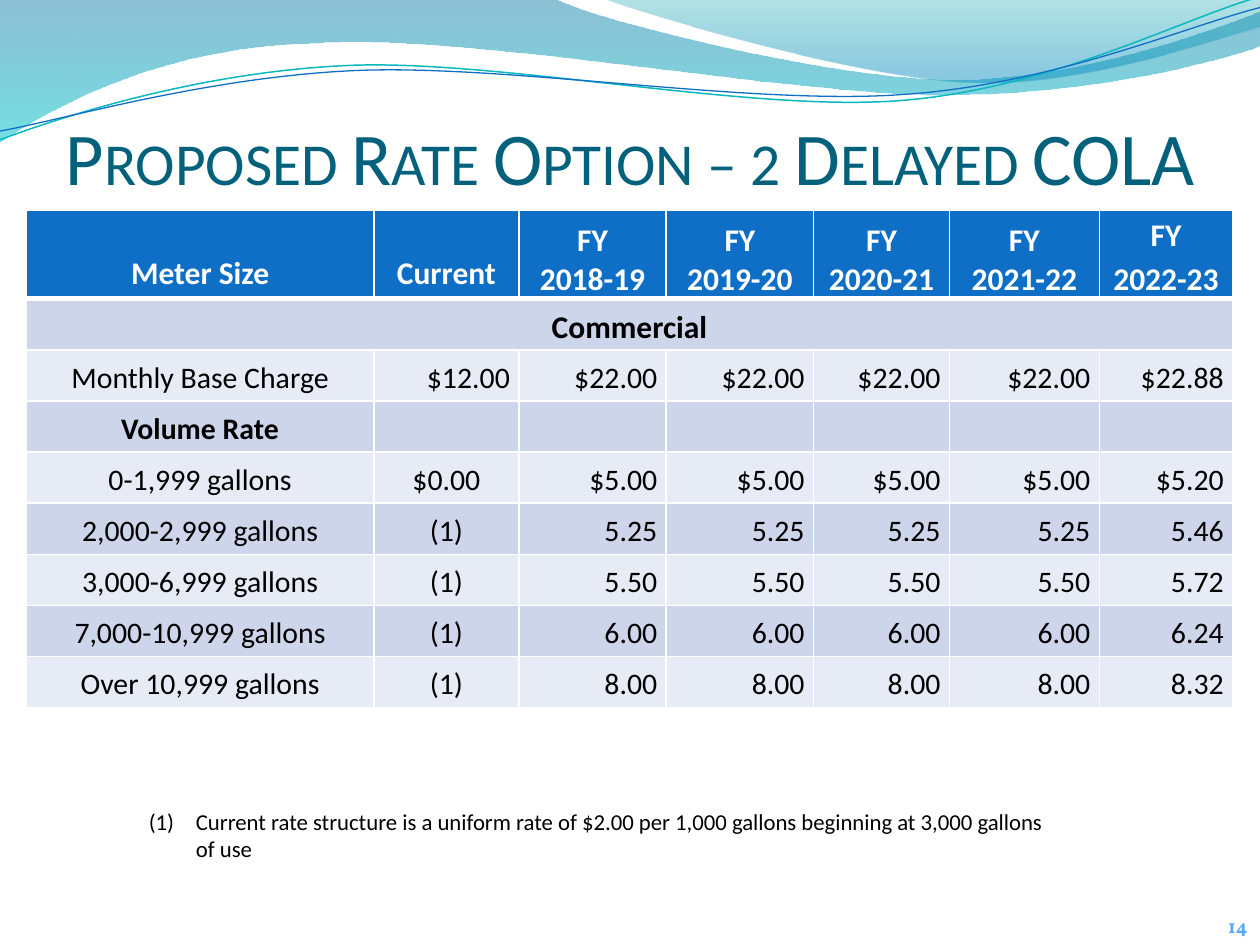
from lxml import etree
from pptx import Presentation
from pptx import util as u
from pptx.dml import color
from pptx.enum import text
from pptx.oxml import ns

COLORS = {
    "title": "04617B", "header": "0F6FC6", "band": "CCD5EA", "plain": "E7EBF5",
    "white": "FFFFFF", "black": "000000", "number": "59AAF2",
    "teal": "0AB8BF", "blue": "0F6FC6",
    "deep": "0074A1", "aqua": "00C6CF", "sea": "00A1A9", "sky": "008BBF",
}
FONT = "Calibri"
ALIGN = text.PP_ALIGN
ANCHOR = text.MSO_ANCHOR

BACK_WAVE = [(0, 0), (4.4, -0.01), (4.76, 0.17, 6.64, 0.63, 7.58, 0.63),
             (8.53, 0.63, 9.58, 0.26, 10, 0.09), (10.01, 0.36),
             (9.83, 0.44, 8.7, 0.76, 7.46, 0.75), (6.22, 0.75, 3.82, 0.28, 2.57, 0.34),
             (1.29, 0.36, 0.46, 0.83, -0.01, 1.13)]
FRONT_WAVE = [(4.79, -0.01), (5.09, 0.11, 6.82, 0.62, 7.69, 0.65),
              (8.56, 0.69, 9.61, 0.32, 10, 0.21), (10, 0)]
TEAL_LINE = [(0, 1.11), (0.48, 0.93, 1.58, 0.57, 2.77, 0.52),
             (3.95, 0.47, 5.93, 0.89, 7.13, 0.8), (8.33, 0.71, 9.38, 0.15, 9.98, -0.02)]
BLUE_LINE = [(0, 1.04), (0.47, 0.96, 1.64, 0.61, 2.83, 0.56),
             (4.03, 0.51, 5.97, 0.84, 7.17, 0.75), (8.36, 0.67, 9.41, 0.21, 10, 0.06)]

HEADERS = ["Meter Size", "Current"] + [f"FY\v20{y}-{y + 1}" for y in range(18, 23)]
COL_WIDTHS = [7.01, 2.92, 2.97, 2.97, 2.74, 3.02, 2.69]
HEADER_HEIGHT, ROW_HEIGHT = 1.7, 1.03
RATES = [
    ("Monthly Base Charge", "$12.00", "$22.00", "$22.88"),
    ("Volume Rate", "", "", ""),
    ("0-1,999 gallons", "$0.00", "$5.00", "$5.20"),
    ("2,000-2,999 gallons", "(1)", "5.25", "5.46"),
    ("3,000-6,999 gallons", "(1)", "5.50", "5.72"),
    ("7,000-10,999 gallons", "(1)", "6.00", "6.24"),
    ("Over 10,999 gallons", "(1)", "8.00", "8.32"),
]


def rgb(name):
    return color.RGBColor.from_string(COLORS[name])


def set_font(p, size, name, bold=False, font=FONT):
    p.font.size = u.Pt(size)
    p.font.name = font
    p.font.bold = bold
    p.font.color.rgb = rgb(name)


def add_curve(slide, box, outline, close):
    left, top, width = box
    points = [(u.Cm(left + x * width / 10), u.Cm(top + y * width / 10))
              for segment in outline for x, y in zip(segment[::2], segment[1::2])]
    builder = slide.shapes.build_freeform(*points[0])
    builder.add_line_segments(points[1:], close=close)
    sp = builder.convert_to_shape()
    sp.shadow.inherit = False
    lines = iter(list(sp._element.iter(ns.qn("a:lnTo"))))
    for segment in outline[1:]:
        first = next(lines)
        if len(segment) == 6:
            first.tag_name = None
            curve = etree.Element(ns.qn("a:cubicBezTo"))
            first.addprevious(curve)
            for line in (first, next(lines), next(lines)):
                curve.append(line[0])
                line.getparent().remove(line)
    return sp


def add_waves(slide, box):
    waves = [(BACK_WAVE, [(0, "deep", 45), (1, "aqua", 55)]),
             (FRONT_WAVE, [(0, "sea", 30), (0.8, "sky", 45)])]
    for outline, stops in waves:
        sp = add_curve(slide, box, outline, True)
        sp.line.fill.background()
        sp.fill.gradient()
        sp.fill.gradient_angle = 270
        for stop, (position, name, opacity) in zip(sp.fill.gradient_stops, stops):
            stop.position = position
            stop.color.rgb = rgb(name)
        for tag, (_, _, opacity) in zip(sp._element.spPr.iter(ns.qn("a:srgbClr")), stops):
            etree.SubElement(tag, ns.qn("a:alpha"), val=str(opacity * 1000))
    for outline, name, width in [(TEAL_LINE, "teal", 0.85), (BLUE_LINE, "blue", 0.75)]:
        sp = add_curve(slide, box, outline, False)
        sp.fill.background()
        sp.line.color.rgb = rgb(name)
        sp.line.width = u.Pt(width)


def add_title(slide, box, words):
    title = slide.shapes.title
    title.left, title.top, title.width, title.height = map(u.Cm, box)
    tf = title.text_frame
    tf.auto_size = text.MSO_AUTO_SIZE.NONE
    tf.word_wrap = True
    tf.vertical_anchor = ANCHOR.MIDDLE
    tf.margin_left = tf.margin_right = tf.margin_bottom = 0
    p = tf.paragraphs[0]
    r = p.add_run()
    r.text = words
    r._r.get_or_add_rPr().set("cap", "small")
    p.alignment = ALIGN.CENTER
    set_font(p, 42.5, "title")


def add_borders(cell, bottom):
    tc_pr = cell._tc.get_or_add_tcPr()
    for side, width in [("L", 1), ("R", 1), ("T", 1), ("B", bottom)]:
        ln = etree.SubElement(tc_pr, ns.qn(f"a:ln{side}"), w=str(u.Pt(width)))
        fill = etree.SubElement(ln, ns.qn("a:solidFill"))
        etree.SubElement(fill, ns.qn("a:srgbClr"), val=COLORS["white"])


def format_cell(cell, row, col, words):
    header, section = row == 0, row in (1, 3)
    add_borders(cell, 3 if header else 1)
    cell.fill.solid()
    cell.fill.fore_color.rgb = rgb("header" if header else "band" if row % 2 else "plain")
    cell.vertical_anchor = ANCHOR.BOTTOM if header else ANCHOR.MIDDLE
    if not header or col > 1:
        cell.margin_left = cell.margin_right = u.Cm(0.18)
        cell.margin_top = cell.margin_bottom = 0
    cell.text = words
    p = cell.text_frame.paragraphs[0]
    centered = header or col == 0 or (col == 1 and row > 2)
    p.alignment = ALIGN.CENTER if centered else ALIGN.RIGHT
    if not header or col == len(HEADERS) - 1:
        p.line_spacing = 1.15
    set_font(p, 18 if row < 2 else 17, "white" if header else "black", header or section)


def add_rates(slide, box):
    rows = [HEADERS, ["Commercial"] + [""] * 6]
    rows += [[label, current] + [steady] * 4 + [last] for label, current, steady, last in RATES]
    left, top, width, height = map(u.Cm, box)
    table = slide.shapes.add_table(len(rows), len(HEADERS), left, top, width, height).table
    table.first_row = table.horz_banding = False
    for column, size in zip(table.columns, COL_WIDTHS):
        column.width = u.Cm(size)
    for i, values in enumerate(rows):
        table.rows[i].height = u.Cm(ROW_HEIGHT if i else HEADER_HEIGHT)
        for j, words in enumerate(values):
            format_cell(table.cell(i, j), i, j, words)
    table.cell(1, 0).merge(table.cell(1, len(HEADERS) - 1))


def add_text(slide, box, words):
    tf = slide.shapes.add_textbox(*map(u.Cm, box)).text_frame
    tf.word_wrap = True
    p = tf.paragraphs[0]
    p.text = words
    return p


def add_footnote(slide, box, words):
    p = add_text(slide, box, words)
    p_pr = p._p.get_or_add_pPr()
    p_pr.set("marL", str(u.Cm(0.95)))
    p_pr.set("indent", str(u.Cm(-0.95)))
    etree.SubElement(p_pr, ns.qn("a:buFont"), typeface="+mj-lt")
    etree.SubElement(p_pr, ns.qn("a:buAutoNum"), type="arabicParenBoth")
    set_font(p, 13, "black")


def add_page_number(slide, box, number):
    p = add_text(slide, box, number)
    p.alignment = ALIGN.RIGHT
    set_font(p, 11, "number", True, "Vollkorn")


def main():
    prs = Presentation()
    prs.slide_width, prs.slide_height = u.Cm(25.4), u.Cm(19.05)
    slide = prs.slides.add_slide(prs.slide_layouts[5])
    add_waves(slide, (0, 0, 25.4))
    add_title(slide, (0.02, 1.9, 25.37, 2.34), "Proposed Rate Option – 2 Delayed COLA")
    add_rates(slide, (0.53, 4.24, sum(COL_WIDTHS), HEADER_HEIGHT + 8 * ROW_HEIGHT))
    add_footnote(slide, (2.75, 16.16, 18.62, 1.37),
                 "Current rate structure is a uniform rate of $2.00 per 1,000 gallons "
                 "beginning at 3,000 gallons of use")
    add_page_number(slide, (21.39, 18.31, 4.01, 0.74), "14")
    prs.save("out.pptx")


if __name__ == "__main__":
    main()
